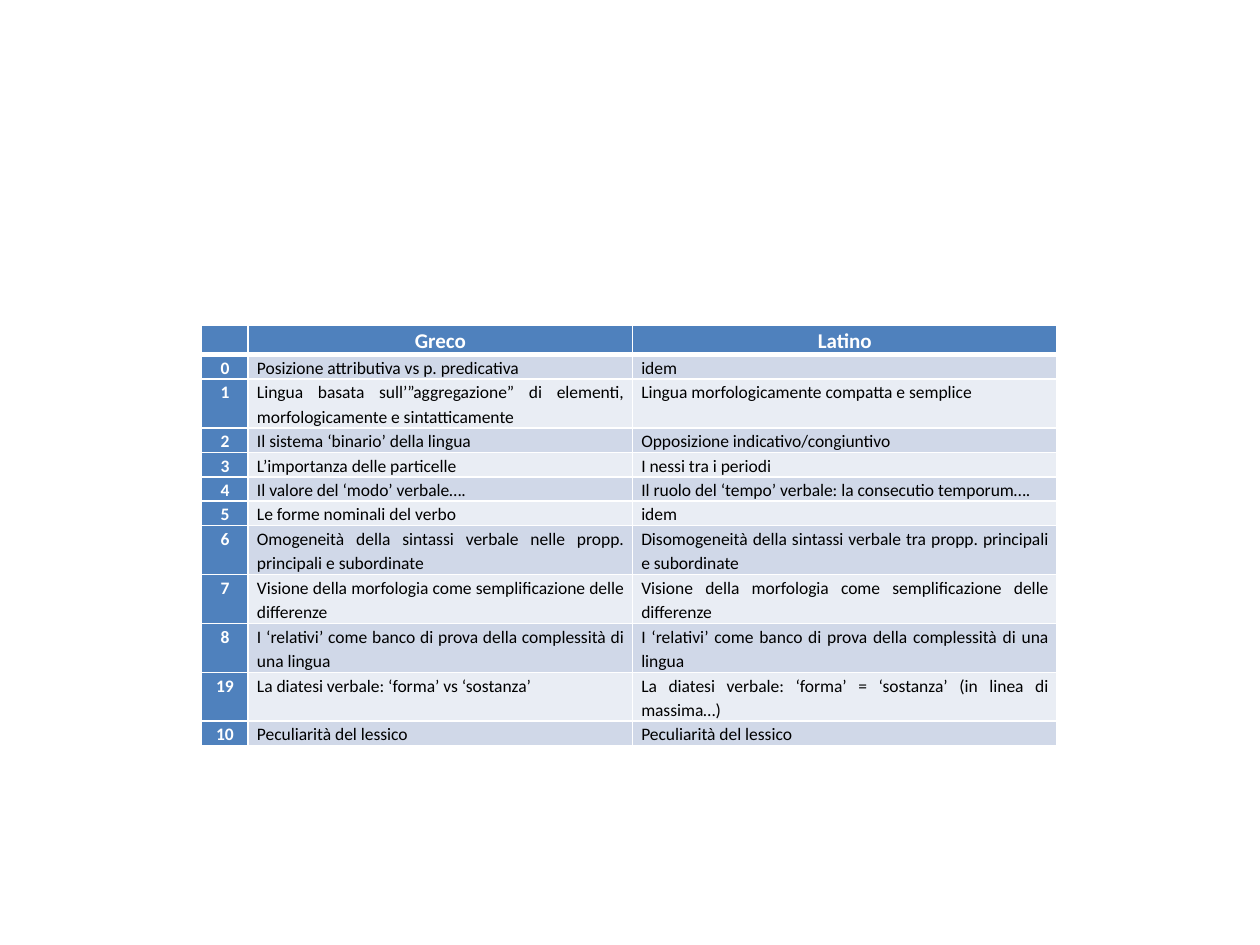
"""Build a slide with a table comparing Greek and Latin."""
from lxml import etree
from pptx import Presentation, util as u
from pptx.dml.color import RGBColor
from pptx.enum import text
from pptx.oxml import ns

HUES = {"head": "4F81BD", "odd": "D0D8E8", "even": "E9EDF4",
        "white": "FFFFFF", "black": "000000"}
ROWS = [
    ("", "Greco", "Latino"),
    ("0", "Posizione attributiva vs p. predicativa", "idem"),
    ("1", "Lingua basata sull’”aggregazione” di elementi, morfologicamente e sintatticamente",
     "Lingua morfologicamente compatta e semplice"),
    ("2", "Il sistema ‘binario’ della lingua", "Opposizione indicativo/congiuntivo"),
    ("3", "L’importanza delle particelle", "I nessi tra i periodi"),
    ("4", "Il valore del ‘modo’ verbale….",
     "Il ruolo del ‘tempo’ verbale: la consecutio temporum…."),
    ("5", "Le forme nominali del verbo", "idem"),
    ("6", "Omogeneità della sintassi verbale nelle propp. principali e subordinate",
     "Disomogeneità della sintassi verbale tra propp. principali e subordinate"),
    ("7", "Visione della morfologia come semplificazione delle differenze",
     "Visione della morfologia come semplificazione delle differenze"),
    ("8", "I ‘relativi’ come banco di prova della complessità di una lingua",
     "I ‘relativi’ come banco di prova della complessità di una lingua"),
    ("19", "La diatesi verbale: ‘forma’ vs ‘sostanza’",
     "La diatesi verbale: ‘forma’ = ‘sostanza’ (in linea di massima…)"),
    ("10", "Peculiarità del lessico", "Peculiarità del lessico"),
]
WIDTHS = [0.37, 3.05, 3.37]
TALL = {2, 7, 8, 9, 10}
HIGHS = [0.23] + [0.38 if row in TALL else 0.19 for row in range(1, len(ROWS))]


def edge(cell, side, size):
    line = etree.SubElement(cell._tc.get_or_add_tcPr(), ns.qn("a:ln" + side),
                            w=str(u.Pt(size)))
    fill = etree.SubElement(line, ns.qn("a:solidFill"))
    etree.SubElement(fill, ns.qn("a:srgbClr"), val=HUES["white"])


def dress(cell, words, row, col):
    top, key = row == 0, row == 0 or col == 0
    thick = {"T": 3 if row == 1 else 1, "B": 3 if top else 1}
    for side in "LRTB":
        edge(cell, side, thick.get(side, 1))
    cell.fill.solid()
    hue = "head" if key else "odd" if row % 2 else "even"
    cell.fill.fore_color.rgb = RGBColor.from_string(HUES[hue])
    cell.margin_left = cell.margin_right = u.Inches(0.07)
    cell.margin_top = cell.margin_bottom = 0
    para = cell.text_frame.paragraphs[0]
    para.text = words
    para.line_spacing = 1.15
    para.alignment = text.PP_ALIGN.CENTER if key else text.PP_ALIGN.JUSTIFY
    for run in para.runs:
        font = run.font
        font.name, font.size, font.bold = "Calibri", u.Pt(12 if top else 10), key
        font.color.rgb = RGBColor.from_string(HUES["white" if key else "black"])
    if not words:
        etree.SubElement(para._p, ns.qn("a:endParaRPr"), sz="1200")


def main():
    deck = Presentation()
    deck.slide_width, deck.slide_height = u.Inches(10), u.Inches(7.5)
    slide = deck.slides.add_slide(deck.slide_layouts[6])
    table = slide.shapes.add_table(
        len(ROWS), len(WIDTHS), u.Inches(1.6), u.Inches(2.58),
        u.Inches(sum(WIDTHS)), u.Inches(sum(HIGHS))).table
    for col, wide in zip(table.columns, WIDTHS):
        col.width = u.Inches(wide)
    for row, high in zip(table.rows, HIGHS):
        row.height = u.Inches(high)
    for row, line in enumerate(ROWS):
        for col, words in enumerate(line):
            dress(table.cell(row, col), words, row, col)
    deck.save("out.pptx")


if __name__ == "__main__":
    main()
